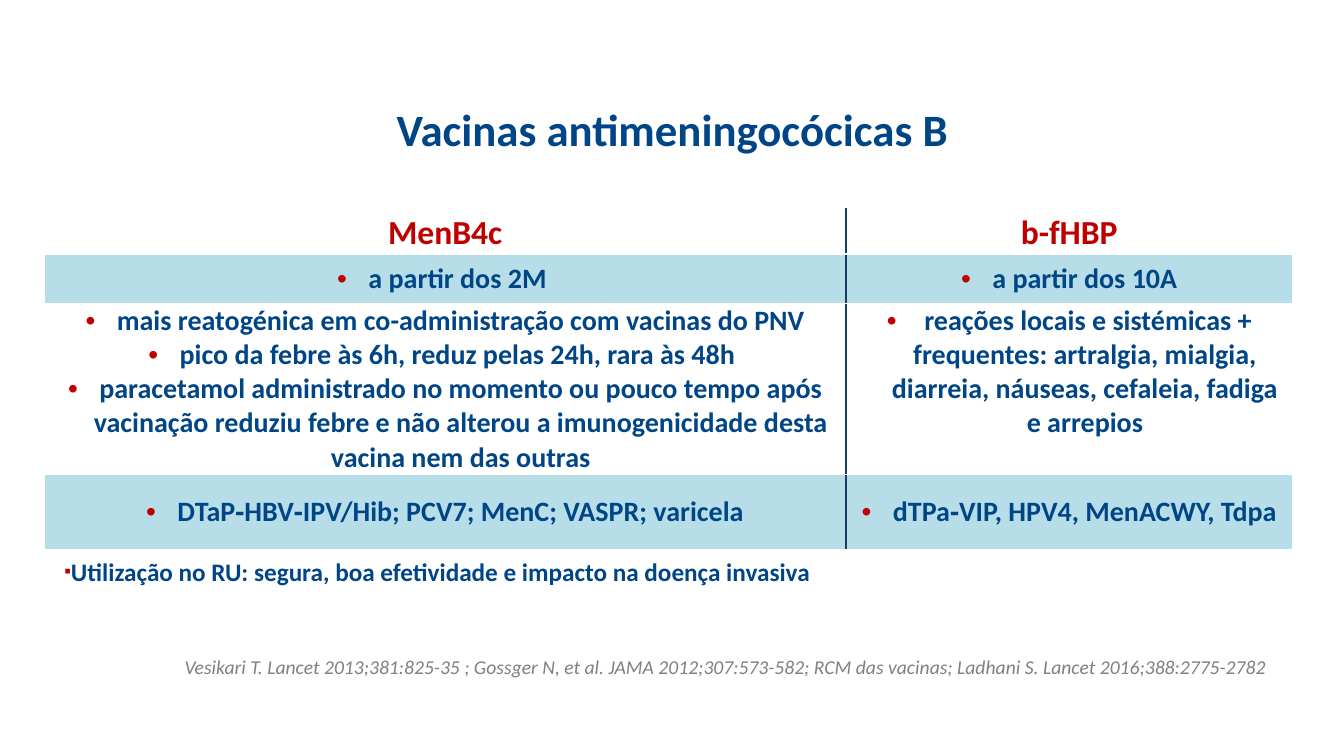
from lxml.etree import SubElement as Sub, Element
from pptx import Presentation
from pptx.dml.color import RGBColor
from pptx.enum.text import MSO_ANCHOR as Anchor, PP_ALIGN as Align
from pptx.oxml.ns import qn
from pptx.util import Inches, Pt

BLUE, RED, GRAY = "004586", "C00000", "808080"
NAVY, WHITE, BAND = "143D64", "FFFFFF", "B7DEE8"


def color(hex):
    return RGBColor.from_string(hex)


class Deck:
    """Hold the style and the current slide, and draw each kind of element."""

    def __init__(self, font):
        self.font = font
        self.prs = Presentation()
        self.prs.slide_width, self.prs.slide_height = Inches(13.33), Inches(7.5)
        self.slide = self.prs.slides.add_slide(self.prs.slide_layouts[6])

    def style(self, par, size, tint, align=Align.CENTER, bold=True, italic=False):
        par.alignment = align
        for run in par.runs:
            font = run.font
            font.name, font.size = self.font, Pt(size)
            font.bold, font.italic = bold, italic
            font.color.rgb = color(tint)

    def bullet(self, par, mark, indent=0, scale=100):
        props = par._p.get_or_add_pPr()
        props.set("marL", str(Inches(indent)))
        props.set("indent", str(-Inches(indent)))
        Sub(Sub(props, qn("a:buClr")), qn("a:srgbClr"), val=RED)
        Sub(props, qn("a:buSzPct"), val=str(scale * 1000))
        Sub(props, qn("a:buFont"), typeface="Arial")
        Sub(props, qn("a:buChar"), char=mark)

    def text(self, box, words, size, tint, anchor=Anchor.TOP, **look):
        frame = self.slide.shapes.add_textbox(*map(Inches, box)).text_frame
        frame.word_wrap, frame.vertical_anchor = True, anchor
        frame.text = words
        par = frame.paragraphs[0]
        self.style(par, size, tint, **look)
        return par

    def border(self, cell, sides):
        props = cell._tc.get_or_add_tcPr()
        for spot, (side, tint) in enumerate(sides.items()):
            line = Element(qn(f"a:ln{side}"), w=str(Pt(1)))
            Sub(Sub(line, qn("a:solidFill")), qn("a:srgbClr"), val=tint)
            props.insert(spot, line)

    def cell(self, cell, words, fill, head):
        cell.margin_left = cell.margin_right = Inches(0.07)
        cell.margin_top = cell.margin_bottom = 0
        cell.vertical_anchor = Anchor.MIDDLE
        cell.text_frame.text = words
        for par in cell.text_frame.paragraphs:
            if head:
                par.line_spacing = 1.1
            else:
                self.bullet(par, "•", 0.31)
            self.style(par, 24 if head else 20, RED if head else BLUE)
        if fill:
            cell.fill.solid()
            cell.fill.fore_color.rgb = color(fill)
        else:
            cell.fill.background()

    def table(self, left, top, cols, rows, data, fills):
        size = map(Inches, (left, top, sum(cols), sum(rows)))
        grid = self.slide.shapes.add_table(len(rows), len(cols), *size).table
        grid.first_row = grid.horz_banding = False
        for col, width in zip(grid.columns, cols):
            col.width = Inches(width)
        for r, (height, line, fill) in enumerate(zip(rows, data, fills)):
            grid.rows[r].height = Inches(height)
            for c, words in enumerate(line):
                cell = grid.cell(r, c)
                self.cell(cell, words, fill, r == 0)
                self.border(cell, {"L": NAVY if c else WHITE,
                                   "R": WHITE if c else NAVY,
                                   "T": WHITE, "B": WHITE})
        return grid


def main():
    deck = Deck("Calibri")
    deck.text((0, 6.45, 12.67, 0.32),
              "Vesikari T. Lancet 2013;381:825-35 ; Gossger N, et al. JAMA 2012;307:573-582; "
              "RCM das vacinas; Ladhani S. Lancet 2016;388:2775-2782",
              14, GRAY, align=Align.RIGHT, bold=False, italic=True)
    deck.text((0.67, 0.95, 12, 0.66), "Vacinas antimeningocócicas B",
              32, BLUE, Anchor.MIDDLE)
    data = [
        ("MenB4c", "b-fHBP"),
        ("a partir dos 2M ", "a partir dos 10A"),
        ("mais reatogénica em co-administração com vacinas do PNV\n"
         "pico da febre às 6h, reduz pelas 24h, rara às 48h \n"
         "paracetamol administrado no momento ou pouco tempo após vacinação "
         "reduziu febre e não alterou a imunogenicidade desta vacina nem das outras",
         " reações locais e sistémicas + frequentes: artralgia, mialgia, "
         "diarreia, náuseas, cefaleia, fadiga e arrepios"),
        ("DTaP‐HBV‐IPV/Hib; PCV7; MenC; VASPR; varicela",
         "dTPa‐VIP, HPV4, MenACWY, Tdpa"),
    ]
    grid = deck.table(0.44, 2.07, (7.95, 4.43), (0.45, 0.49, 1.7, 0.74),
                      data, (None, BAND, WHITE, BAND))
    grid.cell(2, 1).vertical_anchor = Anchor.TOP
    note = deck.text((0.54, 5.38, 8.24, 0.46),
                     "Utilização no RU: segura, boa efetividade e impacto na doença invasiva",
                     18, BLUE, align=Align.JUSTIFY)
    deck.bullet(note, "▪", scale=75)
    note.line_spacing = 1.3
    deck.prs.save("out.pptx")


if __name__ == "__main__":
    main()
